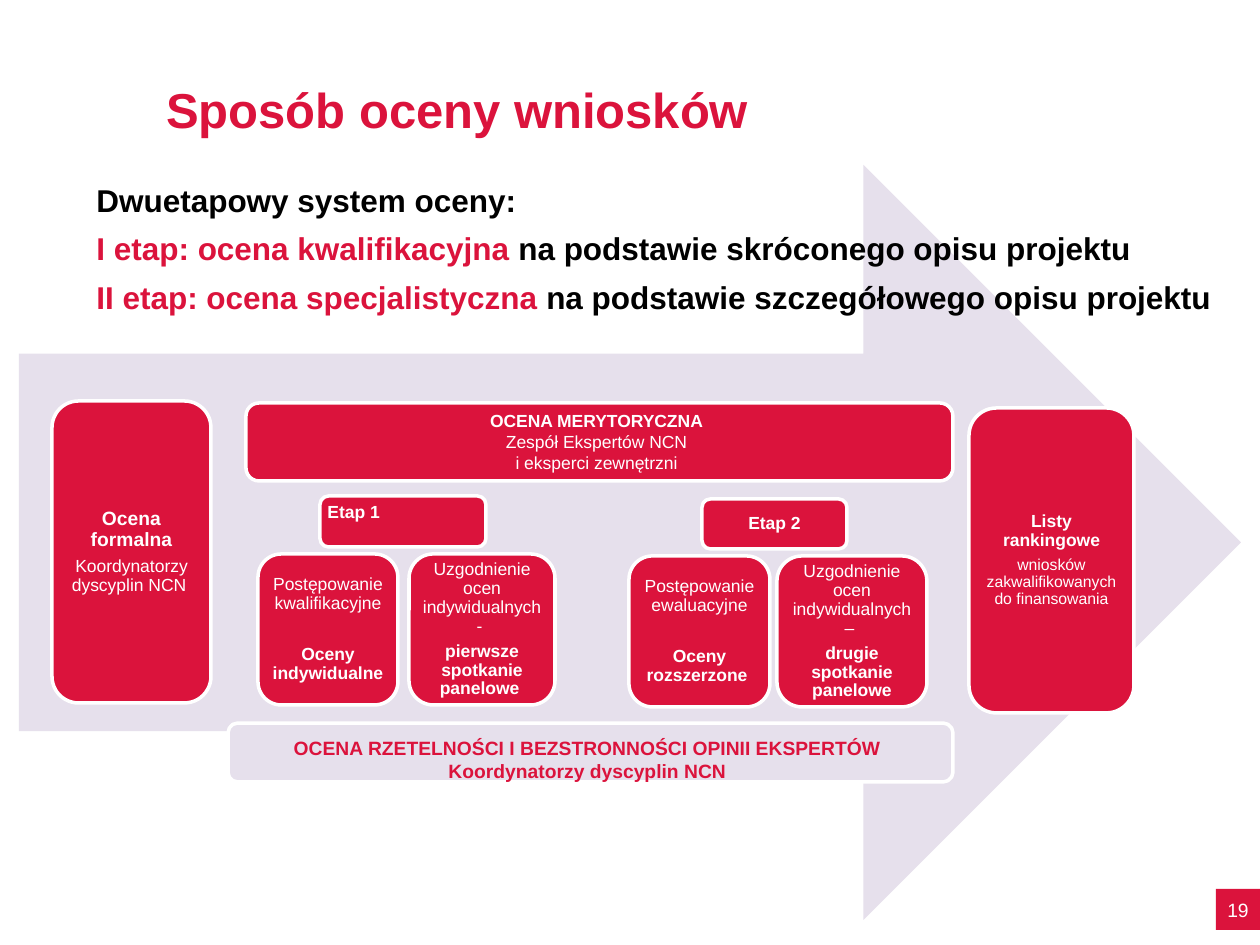
from pptx import Presentation
from pptx.dml.color import RGBColor
from pptx.enum.shapes import MSO_SHAPE
from pptx.enum.text import MSO_ANCHOR, PP_ALIGN
from pptx.util import Pt

ROUNDED, RECTANGLE, ARROW = MSO_SHAPE.ROUNDED_RECTANGLE, MSO_SHAPE.RECTANGLE, MSO_SHAPE.RIGHT_ARROW
TOP, MIDDLE, BOTTOM = MSO_ANCHOR.TOP, MSO_ANCHOR.MIDDLE, MSO_ANCHOR.BOTTOM
LEFT, CENTER, JUSTIFY = PP_ALIGN.LEFT, PP_ALIGN.CENTER, PP_ALIGN.JUSTIFY

PX = 914400 / 126
COLORS = {"red": "DB133C", "lilac": "E6E0EC", "white": "FFFFFF", "black": "000000"}

# Content: each paragraph is a list of spans (text, size, bold, colour)
TITLE = [[("Sposób oceny wniosków", 28, True, "red")]]
INTRO = [
    [("Dwuetapowy system oceny:", 18, True, "black")],
    [("I etap: ocena kwalifikacyjna ", 18, True, "red"),
     ("na podstawie skróconego opisu projektu", 18, True, "black")],
    [("II etap: ocena specjalistyczna ", 18, True, "red"),
     ("na podstawie szczegółowego opisu projektu", 18, True, "black")],
]
MERIT = [
    [("OCENA MERYTORYCZNA", 10, True, "white")],
    [("Zespół Ekspertów NCN", 10, False, "white")],
    [("i eksperci zewnętrzni", 10, False, "white")],
]
INTEGRITY = [
    [("OCENA RZETELNOŚCI I BEZSTRONNOŚCI OPINII EKSPERTÓW", 11, True, "red")],
    [("Koordynatorzy dyscyplin NCN", 11, True, "red")],
]
PAGE_NUMBER = [[("19", 11, False, "white")]]

# Process cards: place in px, inset in px, gap after first paragraph in points, lines
CARDS = [
    ((52, 401, 159, 302), 6, 4,
     [("Ocena formalna", 11, True), ("Koordynatorzy dyscyplin NCN ", 10, False)]),
    ((969, 408, 165, 305), 5, 3.5,
     [("Listy rankingowe", 10, True), ("wniosków zakwalifikowanych do finansowania", 9, False)]),
    ((258, 554, 140, 151), 5, 18,
     [("Postępowanie kwalifikacyjne", 10, False), ("Oceny indywidualne", 10, True)]),
    ((409, 554, 146, 151), 5, 3.5,
     [("Uzgodnienie ocen indywidualnych- ", 10, False), ("pierwsze spotkanie panelowe ", 10, True)]),
    ((629, 556, 141, 151), 5, 18,
     [("Postępowanie ewaluacyjne", 10, False), ("Oceny rozszerzone ", 10, True)]),
    ((777, 556, 150, 151), 5, 3.5,
     [("Uzgodnienie ocen indywidualnych– ", 10, False), ("drugie spotkanie panelowe", 10, True)]),
]
STAGES = [
    ((320, 496, 166, 51), "Etap 1", LEFT, TOP),
    ((702, 499, 145, 50), "Etap 2", CENTER, MIDDLE),
]


def emu(px):
    return round(px * PX)


def color(name):
    return RGBColor.from_string(COLORS[name])


def write(shape, paragraphs, align=CENTER, anchor=MIDDLE, insets=(0, 0, 0, 0),
          spacing=1.0, gap=0, wrap=True):
    frame = shape.text_frame
    left, top, right, bottom = map(emu, insets)
    settings = {"word_wrap": wrap, "vertical_anchor": anchor, "margin_left": left,
                "margin_top": top, "margin_right": right, "margin_bottom": bottom}
    for name, value in settings.items():
        setattr(frame, name, value)
    for index, spans in enumerate(paragraphs):
        para = frame.paragraphs[0] if index == 0 else frame.add_paragraph()
        last = index == len(paragraphs) - 1
        formats = {"alignment": align, "line_spacing": spacing,
                   "space_before": Pt(0), "space_after": Pt(0 if last else gap)}
        for name, value in formats.items():
            setattr(para, name, value)
        for text, size, bold, tone in spans:
            span = para.add_run()
            span.text = text
            for name, value in {"name": "Arial", "size": Pt(size), "bold": bold}.items():
                setattr(span.font, name, value)
            span.font.color.rgb = color(tone)


def add_block(page, kind, place, fill, outlined=True):
    shape = page.shapes.add_shape(kind, *map(emu, place))
    shape.shadow.inherit = False
    shape.fill.solid()
    shape.fill.fore_color.rgb = color(fill)
    if outlined:
        shape.line.color.rgb = color("white")
        shape.line.width = Pt(2)
    else:
        shape.line.fill.background()
    return shape


def add_text(page, place, paragraphs, **options):
    box = page.shapes.add_textbox(*map(emu, place))
    write(box, paragraphs, insets=(12.6, 6.3, 12.6, 6.3), **options)


def main():
    deck = Presentation()
    deck.slide_width, deck.slide_height = emu(1260), emu(945)
    page = deck.slides.add_slide(deck.slide_layouts[6])

    # Background arrow
    add_block(page, ARROW, (19, 165, 1222, 755), "lilac", outlined=False)

    # Process cards and stage labels
    for place, inset, gap, lines in CARDS:
        card = add_block(page, ROUNDED, place, "red")
        write(card, [[(*line, "white")] for line in lines],
              insets=[inset] * 4, spacing=0.9, gap=gap)
    for place, label, align, anchor in STAGES:
        stage = add_block(page, ROUNDED, place, "red")
        write(stage, [[(label, 10, True, "white")]], align, anchor, [5] * 4, spacing=0.9)

    # Page number
    number = add_block(page, RECTANGLE, (1216, 889, 44, 41), "red", outlined=False)
    write(number, PAGE_NUMBER, wrap=False)

    # Title and introduction
    add_text(page, (154, 65, 1111, 80), TITLE, align=LEFT, anchor=BOTTOM)
    add_text(page, (84, 175, 1142, 665), INTRO, align=JUSTIFY, anchor=TOP, gap=6)

    # Wide bars
    integrity = add_block(page, ROUNDED, (228, 723, 725, 59), "lilac")
    write(integrity, INTEGRITY, anchor=TOP, insets=(0, 10, 6, 0))
    merit = add_block(page, ROUNDED, (246, 403, 707, 78), "red")
    write(merit, MERIT, insets=(0, 0, 6, 0))

    deck.save("out.pptx")


if __name__ == "__main__":
    main()
